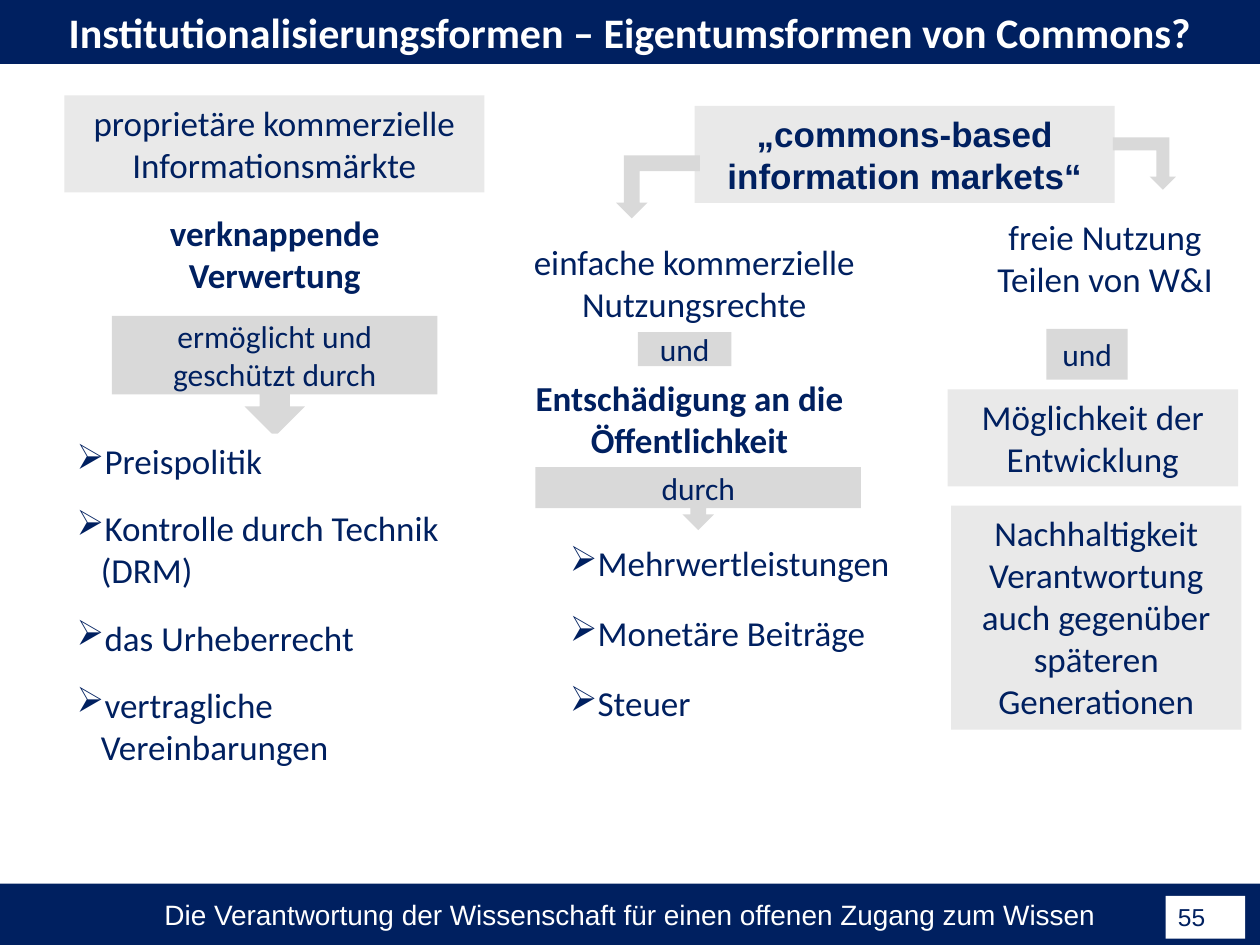
"""Build the slide on ownership forms of commons."""
from lxml import etree
from pptx import Presentation
from pptx.dml.color import RGBColor
from pptx.enum import shapes as sh, text as tx
from pptx.oxml import ns
from pptx.util import Pt

HUES = {"navy": "002060", "white": "FFFFFF", "pale": "E9E9E9", "grey": "D9D9D9"}
RECT = sh.MSO_SHAPE.RECTANGLE
CALL = sh.MSO_SHAPE.DOWN_ARROW_CALLOUT
BENT = sh.MSO_SHAPE.BENT_UP_ARROW
MID = tx.MSO_ANCHOR.MIDDLE
LEFT = tx.PP_ALIGN.LEFT
TIGHT = {"vertical_anchor": MID, "margin_left": Pt(1.5), "margin_right": Pt(1.5),
         "margin_top": Pt(0.7), "margin_bottom": Pt(0.7)}
FLUSH = {"vertical_anchor": MID, "margin_left": 0, "margin_right": 0,
         "margin_top": 0, "margin_bottom": 0}
BOLD = {"bold": True}
SMALL = {"size": Pt(18)}
ONE, TWO = 31.5, 55.5

deck = Presentation()
deck.slide_width, deck.slide_height = Pt(720), Pt(540)
slide = deck.slides.add_slide(deck.slide_layouts[6])


def draw(kind, place, fill):
    """Add a plain filled shape."""
    shape = slide.shapes.add_shape(kind, *[Pt(v) for v in place])
    shape.shadow.inherit = False
    shape.fill.solid()
    shape.fill.fore_color.rgb = RGBColor.from_string(HUES[fill])
    shape.line.fill.background()
    return shape


def write(shape, words, look={}, frame={}, align=tx.PP_ALIGN.CENTER, hue="navy"):
    """Fill a shape with text in one format."""
    body = shape.text_frame
    body.text = words
    for key, val in {"word_wrap": True, "vertical_anchor": tx.MSO_ANCHOR.TOP, **frame}.items():
        setattr(body, key, val)
    for par in body.paragraphs:
        par.alignment = align
        font = par.runs[0].font
        for key, val in {"name": "Calibri", "size": Pt(20), **look}.items():
            setattr(font, key, val)
        font.color.rgb = RGBColor.from_string(HUES[hue])


foot = draw(RECT, (0, 505, 720, 35), "navy")
write(foot, "Die Verantwortung der Wissenschaft für einen offenen Zugang zum Wissen",
      {"name": "Arial", "size": Pt(16)}, FLUSH, hue="white")
page = draw(RECT, (666, 512, 45.5, 24.5), "white")
write(page, "55", {"name": "Arial", "size": Pt(14)}, align=LEFT)
title = draw(RECT, (0, 0, 720, 36.5), "navy")
write(title, "Institutionalisierungsformen – Eigentumsformen von Commons?",
      {"size": Pt(24), "bold": True}, hue="white")

boxes = [
    ("proprietäre kommerzielle Informationsmärkte", (36.75, 54.5, 240, TWO), "pale", {}, {}),
    ("„commons-based information markets“", (397, 60.5, 240, TWO), "pale",
     {"name": "Arial", "bold": True}, {}),
    ("verknappende Verwertung", (55, 117.5, 204, TWO), "white", BOLD, {}),
    ("einfache kommerzielle Nutzungsrechte", (284.5, 134, 224.5, TWO), "white", {}, {}),
    ("Entschädigung an die Öffentlichkeit", (298, 214, 192, 50.5), "white", BOLD, TIGHT),
    ("und", (364.5, 189.75, 53.5, 19.5), "grey", SMALL, TIGHT),
    ("und", (598, 188, 46.5, 29), "grey", SMALL, {}),
    ("Möglichkeit der Entwicklung", (541.5, 222.5, 166, TWO), "pale", {}, {}),
    ("Nachhaltigkeit Verantwortung auch gegenüber späteren Generationen",
     (543.5, 289, 166, 128), "pale", {}, {}),
    ("freie Nutzung\nTeilen von W&I", (556.5, 119.5, 150, TWO), "white", {}, {}),
]
for words, place, fill, look, frame in boxes:
    write(draw(RECT, place, fill), words, look, frame)

right = draw(BENT, (636, 78.5, 36, 30), "grey")
right._element.spPr.find(ns.qn("a:xfrm")).set("flipV", "1")
left = draw(BENT, (352, 88.75, 48, 36), "grey")
left.rotation = 180

for words, place in [("ermöglicht und geschützt durch", (64, 180.5, 186, 69)),
                     ("durch", (306, 267, 186, 36))]:
    call = draw(CALL, place, "grey")
    for spot, part in enumerate((0.25, 0.25, 0.25, 0.65)):
        call.adjustments[spot] = part
    write(call, words, SMALL, TIGHT)

points = [
    ("Preispolitik", (36.75, 247.75, 240, ONE)),
    ("Kontrolle durch Technik (DRM)", (36.75, 286, 240, TWO)),
    ("das Urheberrecht", (36.75, 348.5, 240, ONE)),
    ("vertragliche Vereinbarungen", (36.75, 386.75, 240, TWO)),
    ("Mehrwertleistungen", (318.5, 306, 209.5, ONE)),
    ("Monetäre Beiträge", (318.5, 346, 195, ONE)),
    ("Steuer", (318.5, 386, 195, ONE)),
]
for words, place in points:
    item = draw(RECT, place, "white")
    write(item, words, align=LEFT)
    props = item.text_frame.paragraphs[0]._p.get_or_add_pPr()
    hang = Pt(13.75) if place[3] == TWO else 0
    props.set("marL", str(hang))
    props.set("indent", str(-hang))
    etree.SubElement(props, ns.qn("a:buChar")).set("char", "➢")

deck.save("out.pptx")
